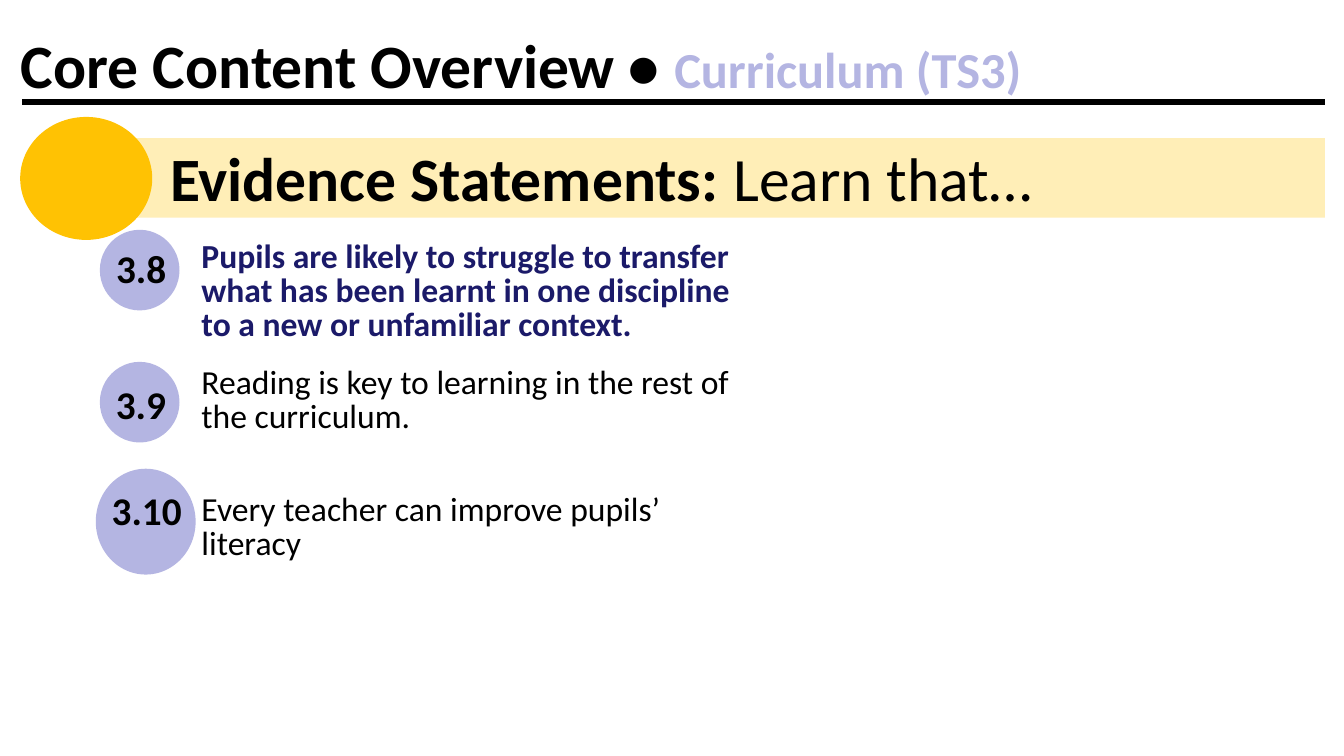
from pptx import Presentation
from pptx.dml.color import RGBColor
from pptx.enum.shapes import MSO_CONNECTOR, MSO_SHAPE
from pptx.enum.text import MSO_AUTO_SIZE, PP_ALIGN
from pptx.oxml.ns import qn
from pptx.util import Inches, Pt
from lxml import etree

RECT, OVAL = MSO_SHAPE.RECTANGLE, MSO_SHAPE.OVAL
LINE = MSO_CONNECTOR.STRAIGHT
GROW = MSO_AUTO_SIZE.SHAPE_TO_FIT_TEXT
LEFT, MID = PP_ALIGN.LEFT, PP_ALIGN.CENTER
BLACK = RGBColor(0x00, 0x00, 0x00)
NAVY = RGBColor(0x1B, 0x1A, 0x69)
LILAC = RGBColor(0xB4, 0xB5, 0xE2)
GOLD = RGBColor(0xFF, 0xC2, 0x03)
CREAM = RGBColor(0xFF, 0xEE, 0xB7)
FONT = "Calibri"
WIDE, HIGH = 13.33, 7.5
RIGHT = 13.14


def add_form(shapes, kind, box, color):
    """Draw a plain filled shape in the box."""
    form = shapes.add_shape(kind, *map(Inches, box))
    form.shadow.inherit = False
    form.fill.solid()
    form.fill.fore_color.rgb = color
    form.line.fill.background()


def add_text(shapes, box, runs, wrap=True, align=LEFT):
    """Write one paragraph of (text, size, color, bold) runs and return it."""
    frame = shapes.add_textbox(*map(Inches, box)).text_frame
    frame.word_wrap = wrap
    frame.auto_size = GROW
    para = frame.paragraphs[0]
    para.alignment = align
    for text, size, color, bold in runs:
        run = para.add_run()
        run.text = text
        font = run.font
        font.name, font.size, font.bold = FONT, Pt(size), bold
        font.color.rgb = color
    return para


def add_head(shapes, left, top):
    """Place the slide title with its rule below."""
    x, y = Inches(left + 0.11), Inches(top + 0.79)
    rule = shapes.add_connector(LINE, x, y, Inches(RIGHT), y)
    rule.line.color.rgb = BLACK
    rule.line.width = Pt(4.5)
    etree.SubElement(rule._element.spPr, qn("a:effectLst"))
    add_text(shapes, (left, top, WIDE - left, 0.84), [
        ("Core Content Overview • ", 44, BLACK, True),
        ("Curriculum (TS3)", 36, LILAC, True)])


def add_band(shapes, left, top):
    """Place the section band with its round marker."""
    start = left + 1.06
    add_form(shapes, RECT, (start, top + 0.21, RIGHT - start, 0.79), CREAM)
    add_form(shapes, OVAL, (left, top, 1.31, 1.22), GOLD)
    add_text(shapes, (left + 1.39, top + 0.18, 11.53, 0.84), [
        ("Evidence Statements: ", 44, BLACK, True),
        ("Learn that…", 44, BLACK, False)])


def add_point(shapes, disc, label, align, mark, body, text, color, bold):
    """Place a numbered disc, with its label offset from it, and a statement."""
    para = add_text(shapes, body, [(text, 24, color, bold)])
    para.line_spacing = 0.85
    para.space_after = Pt(12)
    badge = shapes.add_group_shape().shapes
    add_form(badge, OVAL, disc, LILAC)
    dx, dy, wide, high = label
    add_text(badge, (disc[0] + dx, disc[1] + dy, wide, high),
             [(mark, 28, BLACK, True)], False, align)


POINTS = [
    ((0.99, 2.28, 0.79, 0.8), (0.05, 0.09, 0.72, 0.57), MID, "3.8",
     (1.9, 2.34, 5.74, 1.13),
     "Pupils are likely to struggle to transfer what has been learnt "
     "in one discipline to a new or unfamiliar context.", NAVY, True),
    ((0.99, 3.59, 0.79, 0.8), (0.06, 0.13, 0.72, 0.57), LEFT, "3.9",
     (1.9, 3.59, 5.75, 0.79),
     "Reading is key to learning in the rest of the curriculum.",
     BLACK, False),
    ((0.95, 4.65, 0.99, 1.05), (0.06, 0.13, 1.17, 0.75), LEFT, "3.10",
     (1.9, 4.85, 5.47, 0.79),
     "Every teacher can improve pupils’ literacy", BLACK, False),
]


def main():
    """Build the slide and save it."""
    deck = Presentation()
    deck.slide_width, deck.slide_height = Inches(WIDE), Inches(HIGH)
    shapes = deck.slides.add_slide(deck.slide_layouts[6]).shapes
    add_band(shapes, 0.2, 1.16)
    add_head(shapes, 0.11, 0.22)
    for point in POINTS:
        add_point(shapes, *point)
    deck.save("out.pptx")


if __name__ == "__main__":
    main()
